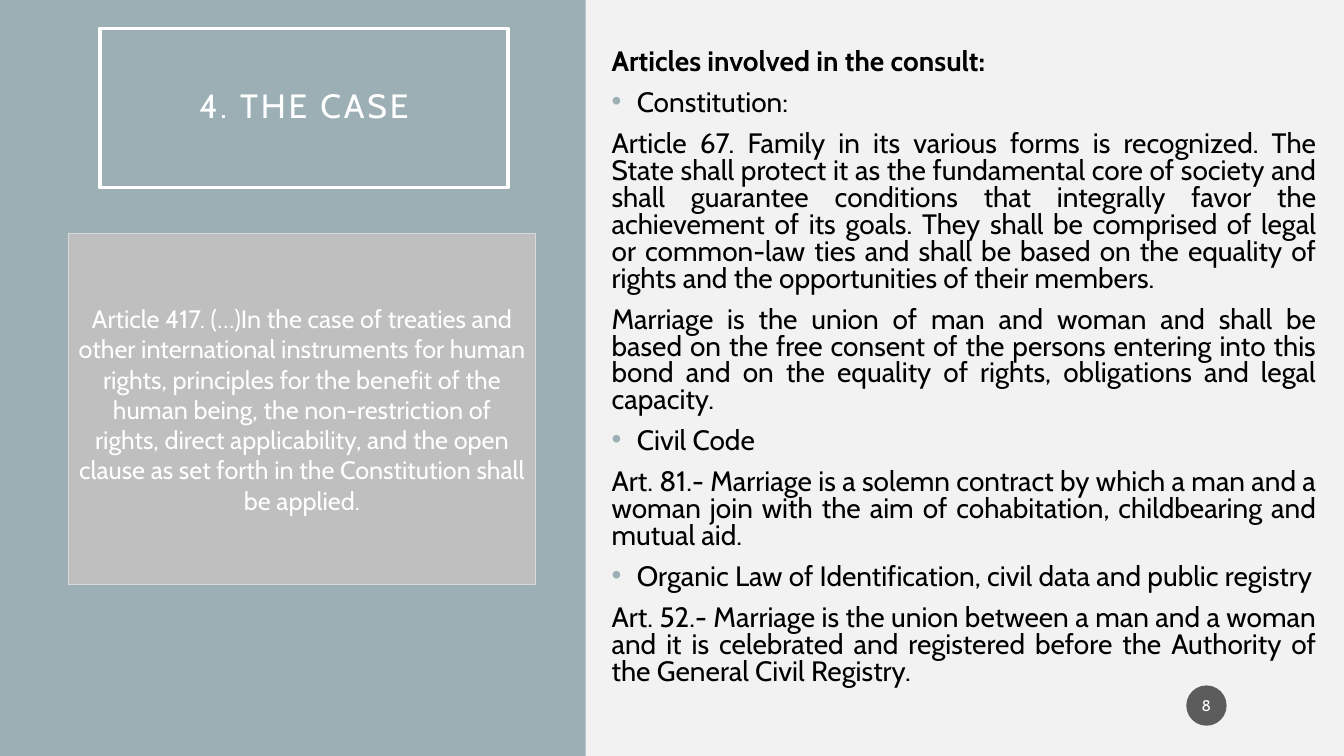
from lxml import etree
from pptx import Presentation
from pptx.dml.color import RGBColor
from pptx.enum.shapes import MSO_SHAPE
from pptx.enum.text import MSO_ANCHOR, MSO_AUTO_SIZE, PP_ALIGN
from pptx.oxml.ns import qn
from pptx.util import Pt

RECT, OVAL = MSO_SHAPE.RECTANGLE, MSO_SHAPE.OVAL
TOP, MIDDLE = MSO_ANCHOR.TOP, MSO_ANCHOR.MIDDLE
CENTER, JUSTIFY = PP_ALIGN.CENTER, PP_ALIGN.JUSTIFY
NO_FIT = MSO_AUTO_SIZE.NONE

# Content
TITLE = "4. THE CASE"
QUOTE = (
    "Article 417. (…)In the case of treaties and other international "
    "instruments for human rights, principles for the benefit of the human "
    "being, the non-restriction of rights, direct applicability, and the open "
    "clause as set forth in the Constitution shall be applied."
)
NUMBER = "8"
LAWS = [  # kind, text
    ("head", "Articles involved in the consult:"),
    ("bullet", "Constitution:"),
    ("text", "Article 67. Family in its various forms is recognized. The State "
             "shall protect it as the fundamental core of society and shall "
             "guarantee conditions that integrally favor the achievement of its "
             "goals. They shall be comprised of legal or common-law ties and "
             "shall be based on the equality of rights and the opportunities of "
             "their members."),
    ("text", "Marriage is the union of man and woman and shall be based on the "
             "free consent of the persons entering into this bond and on the "
             "equality of rights, obligations and legal capacity."),
    ("bullet", "Civil Code"),
    ("text", "Art. 81.- Marriage is a solemn contract by which a man and a woman "
             "join with the aim of cohabitation, childbearing and mutual aid."),
    ("bullet", "Organic Law of Identification, civil data and public registry"),
    ("text", "Art. 52.- Marriage is the union between a man and a woman and it is "
             "celebrated and registered before the Authority of the General "
             "Civil Registry."),
]

# Style
FONT = "Cabin"
COLORS = {
    "back": "9BAFB5", "panel": "F2F2F2", "card": "BFBFBF", "edge": "D9D9D9",
    "badge": "1D1D1D", "white": "FFFFFF", "black": "000000",
}
WIDTH, HEIGHT = 960, 540
SPLIT = 418.3
INDENT = 18


def rgb(name):
    return RGBColor.from_string(COLORS[name])


def style(para, size, color, align, bold=False):
    para.alignment = align
    font = para.font
    font.name, font.size, font.bold = FONT, Pt(size), bold
    font.color.rgb = rgb(color)


def setup(frame, side, ends, anchor=MIDDLE):
    frame.word_wrap = True
    frame.auto_size = NO_FIT
    frame.vertical_anchor = anchor
    frame.margin_left = frame.margin_right = Pt(side)
    frame.margin_top = frame.margin_bottom = Pt(ends)


def block(kind, box, fill, edge=None):
    shape = slide.shapes.add_shape(kind, *map(Pt, box))
    shape.shadow.inherit = False
    shape.fill.solid()
    shape.fill.fore_color.rgb = rgb(fill)
    if edge:
        shape.line.color.rgb = rgb(edge)
        shape.line.width = Pt(1)
    else:
        shape.line.fill.background()
    return shape


def bullet(para):
    props = para._p.get_or_add_pPr()
    props.set("marL", str(Pt(INDENT)))
    props.set("indent", str(-Pt(INDENT)))
    tint = etree.SubElement(props, qn("a:buClr"))
    etree.SubElement(tint, qn("a:srgbClr"), val=COLORS["back"])
    etree.SubElement(props, qn("a:buFont"), typeface="Arial")
    etree.SubElement(props, qn("a:buChar"), char="•")


# Slide
deck = Presentation()
deck.slide_width, deck.slide_height = Pt(WIDTH), Pt(HEIGHT)
slide = deck.slides.add_slide(deck.slide_layouts[5])
slide.background.fill.solid()
slide.background.fill.fore_color.rgb = rgb("back")

# Title
title = slide.shapes.title
title.left, title.top, title.width, title.height = map(Pt, (71.3, 20.2, 291.6, 113.8))
title.line.color.rgb = rgb("white")
title.line.width = Pt(2.5)
title.text_frame.text = TITLE
setup(title.text_frame, 14.4, 14.4)
para = title.text_frame.paragraphs[0]
para.line_spacing = 0.9
style(para, 24, "white", CENTER)
para.runs[0].font._element.set("spc", "200")

# Right panel with the articles
block(RECT, (SPLIT, 0, WIDTH - SPLIT, HEIGHT), "panel")
body = slide.shapes.add_textbox(Pt(429.8), 0, Pt(517.7), Pt(HEIGHT))
frame = body.text_frame
setup(frame, 7.2, 3.6, TOP)
frame.margin_top = Pt(36)
for i, (kind, text) in enumerate(LAWS):
    para = frame.add_paragraph() if i else frame.paragraphs[0]
    para.text = text
    para.line_spacing = 0.8
    para.space_before = Pt(10 if i else 0)
    if kind == "bullet":
        bullet(para)
    style(para, 20, "black", JUSTIFY, kind == "head")

# Page number
badge = block(OVAL, (847.4, 489.6, 28.8, 28.8), "badge")
tint = badge.fill._xPr.find(qn("a:solidFill"))[0]
etree.SubElement(tint, qn("a:alpha"), val="70000")
badge.text_frame.text = NUMBER
setup(badge.text_frame, 1.4, 3.6)
style(badge.text_frame.paragraphs[0], 11, "white", CENTER)

# Quoted article
card = block(RECT, (49, 167, 333.4, 250.6), "card", "edge")
card.text_frame.text = QUOTE
setup(card.text_frame, 7.2, 3.6)
style(card.text_frame.paragraphs[0], 18, "white", CENTER)

deck.save("out.pptx")
